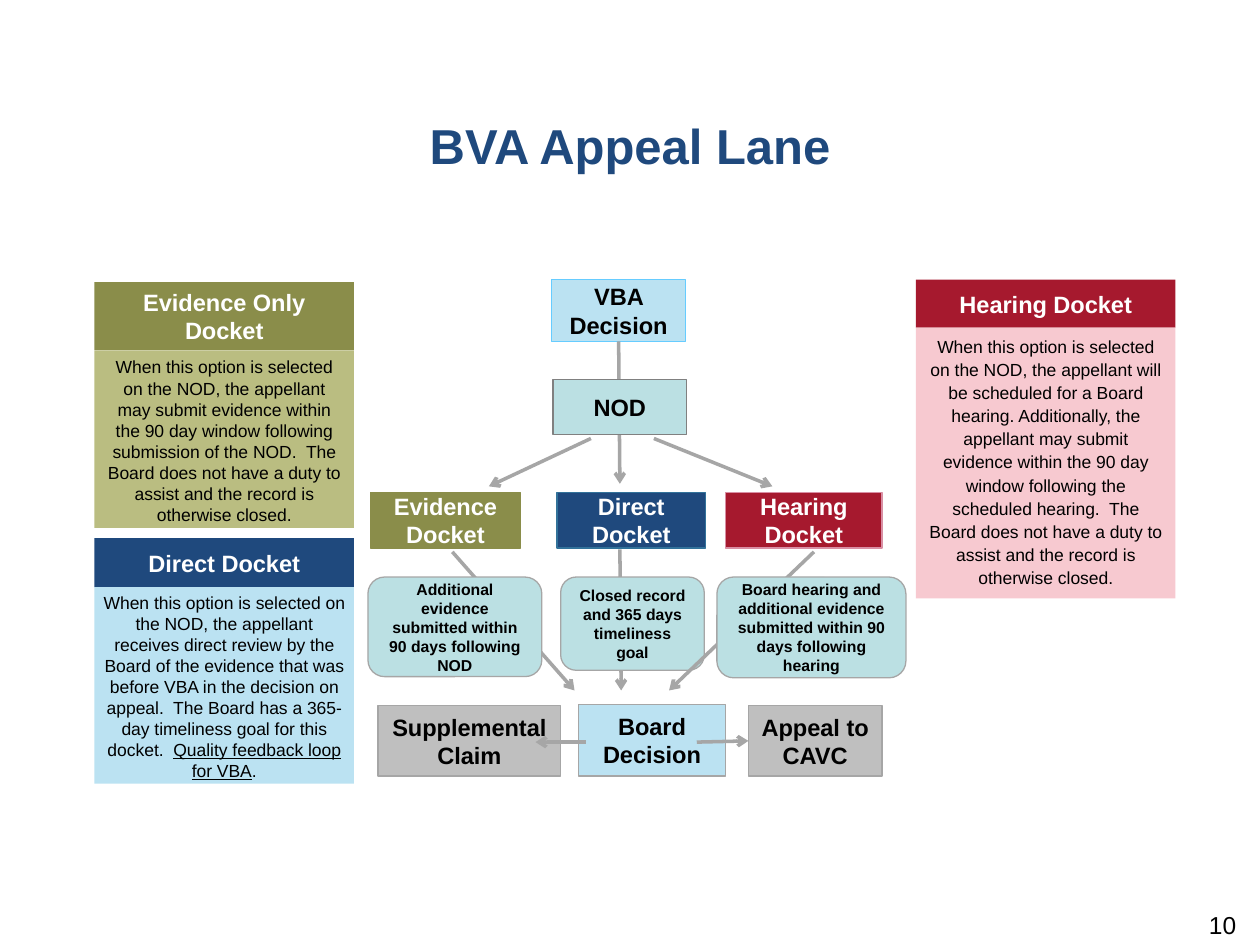
from lxml import etree
from pptx import Presentation
from pptx.dml.color import RGBColor
from pptx.enum.shapes import MSO_CONNECTOR, MSO_SHAPE
from pptx.enum.text import MSO_ANCHOR, PP_ALIGN
from pptx.oxml.ns import qn
from pptx.util import Inches, Pt

NAVY, OLIVE, RED = "1F497D", "8A8D4A", "A6192E"
SKY, TEAL, SILVER, GRAY = "BBE2F2", "BBE0E3", "BFBFBF", "A6A6A6"
BLACK, WHITE = "000000", "FFFFFF"


def rgb(value):
    return RGBColor.from_string(value)


def add_run(p, text, size, color=BLACK, bold=False, underline=False):
    r = p.add_run()
    r.text = text
    font = r.font
    font.name, font.size, font.bold = "Arial", Pt(size), bold
    font.color.rgb = rgb(color)
    if underline:
        font.underline = True


def add_box(s, left, top, width, height, fill, line=None, kind=MSO_SHAPE.RECTANGLE,
            anchor=MSO_ANCHOR.MIDDLE, inset=0.1):
    sp = s.shapes.add_shape(kind, Inches(left), Inches(top), Inches(width), Inches(height))
    sp.shadow.inherit = False
    sp.fill.solid()
    sp.fill.fore_color.rgb = rgb(fill)
    if line:
        sp.line.color.rgb = rgb(line)
        sp.line.width = Pt(0.75)
    else:
        sp.line.fill.background()
    tf = sp.text_frame
    tf.word_wrap = True
    tf.vertical_anchor = anchor
    tf.margin_left = tf.margin_right = Inches(inset)
    tf.margin_top = tf.margin_bottom = Inches(0.05 if inset == 0.1 else 0.04)
    tf.paragraphs[0].alignment = PP_ALIGN.CENTER
    return sp


def add_label(s, text, *box, size=13.5, color=BLACK, **style):
    sp = add_box(s, *box, **style)
    add_run(sp.text_frame.paragraphs[0], text, size, color, bold=True)
    return sp


def add_arrow(s, x1, y1, x2, y2):
    cx = s.shapes.add_connector(MSO_CONNECTOR.STRAIGHT, Inches(x1), Inches(y1),
                                Inches(x2), Inches(y2))
    cx.line.color.rgb = rgb(GRAY)
    cx.line.width = Pt(2)
    etree.SubElement(cx.line._get_or_add_ln(), qn("a:tailEnd"), type="arrow")
    etree.SubElement(cx._element.spPr, qn("a:effectLst"))
    return cx


def add_title(s, left, top, width, height):
    title = s.shapes.title
    title.left, title.top = Inches(left), Inches(top)
    title.width, title.height = Inches(width), Inches(height)
    tf = title.text_frame
    tf.vertical_anchor = MSO_ANCHOR.TOP
    p = tf.paragraphs[0]
    p.alignment = PP_ALIGN.CENTER
    add_run(p, "BVA Appeal Lane", 28, NAVY, bold=True)


def add_panel(s, left, top, width, height, heading, head_height, head_fill, body_fill,
              runs, inset=0.1, spacing=1.0):
    add_label(s, heading, left, top, width, head_height, color=WHITE, fill=head_fill, inset=0.07)
    sp = add_box(s, left, top + head_height, width, height - head_height, body_fill,
                 anchor=MSO_ANCHOR.TOP, inset=inset)
    p = sp.text_frame.paragraphs[0]
    p.line_spacing = spacing
    for text, underline in runs:
        add_run(p, text, 10, underline=underline)


def add_flow(s, left, top):
    def label(text, x, y, width, height, **style):
        return add_label(s, text, left + x, top + y, width, height, **style)

    def arrow(x1, y1, x2, y2):
        return add_arrow(s, left + x1, top + y1, left + x2, top + y2)

    vba = label("VBA Decision", 1.46, 0, 1.06, 0.49, fill=SKY, line="66CCFF")
    arrow(1.99, 0.49, 2, 1.62).begin_connect(vba, 2)
    label("NOD", 1.47, 0.79, 1.06, 0.44, fill=TEAL, line="808080")
    arrow(1.77, 1.26, 0.96, 1.64)
    arrow(2.27, 1.26, 3.21, 1.64)

    dockets = [
        ("Direct Docket", 1.5, 1.18, NAVY, "32729A", (2, 2.14, 2.01, 3.26),
         "Closed record and 365 days timeliness goal", 1.53, 1.14, 0.74),
        ("Evidence Docket", 0.02, 1.19, OLIVE, OLIVE, (0.67, 2.16, 1.64, 3.26),
         "Additional evidence submitted within 90 days following NOD", 0, 1.38, 0.79),
        ("Hearing Docket", 2.84, 1.24, RED, "D98FA4", (3.54, 2.16, 2.39, 3.26),
         "Board hearing and additional evidence submitted within 90 days following hearing",
         2.77, 1.5, 0.8),
    ]
    for name, x, width, fill, line, route, note, note_x, note_width, note_height in dockets:
        label(name, x, 1.69, width, 0.44, color=WHITE, fill=fill, line=line)
        arrow(*route)
        label(note, note_x, 2.36, note_width, note_height, size=9, fill=TEAL, line=GRAY,
              kind=MSO_SHAPE.FLOWCHART_ALTERNATE_PROCESS)

    label("Supplemental Claim", 0.08, 3.38, 1.45, 0.56, fill=SILVER, line=GRAY)
    label("Board Decision", 1.67, 3.37, 1.17, 0.57, fill=SKY, line=GRAY)
    appeal = label("Appeal to CAVC", 3.02, 3.38, 1.06, 0.56, fill=SILVER, line=GRAY)
    arrow(1.73, 3.67, 1.33, 3.67)
    arrow(2.61, 3.67, 3.02, 3.66).end_connect(appeal, 1)


def add_page_number(s, left, top, width, height):
    sp = s.shapes.add_textbox(Inches(left), Inches(top), Inches(width), Inches(height))
    tf = sp.text_frame
    tf.word_wrap = True
    tf.margin_top = 0
    p = tf.paragraphs[0]
    p.alignment = PP_ALIGN.RIGHT
    add_run(p, "10", 14)


def main():
    prs = Presentation()
    prs.slide_width, prs.slide_height = Inches(10), Inches(7.5)
    s = prs.slides.add_slide(prs.slide_layouts[5])
    add_title(s, 0, 0.87, 10, 1.19)
    add_panel(s, 0.75, 2.24, 2.06, 1.95, "Evidence Only Docket", 0.54, OLIVE, "BABD81", [
        ("When this option is selected on the NOD, the appellant may submit evidence within "
         "the 90 day window following submission of the NOD.  The Board does not have a duty "
         "to assist and the record is otherwise closed.", False)])
    add_panel(s, 7.27, 2.22, 2.06, 2.53, "Hearing Docket", 0.38, RED, "F7C9D0", [
        ("When this option is selected on the NOD, the appellant will be scheduled for a Board "
         "hearing. Additionally, the appellant may submit evidence within the 90 day window "
         "following the scheduled hearing.  The Board does not have a duty to assist and the "
         "record is otherwise closed.", False)], spacing=1.1)
    add_panel(s, 0.75, 4.27, 2.06, 1.95, "Direct Docket", 0.39, NAVY, SKY, [
        ("When this option is selected on the NOD, the appellant receives direct review by the "
         "Board of the evidence that was before VBA in the decision on appeal.  The Board has "
         "a 365-day timeliness goal for this docket.  ", False),
        ("Quality feedback loop for VBA", True), (".", False)], inset=0.07)
    add_flow(s, 2.92, 2.22)
    add_page_number(s, 7.58, 7.22, 2.33, 0.4)
    prs.save("out.pptx")


if __name__ == "__main__":
    main()
